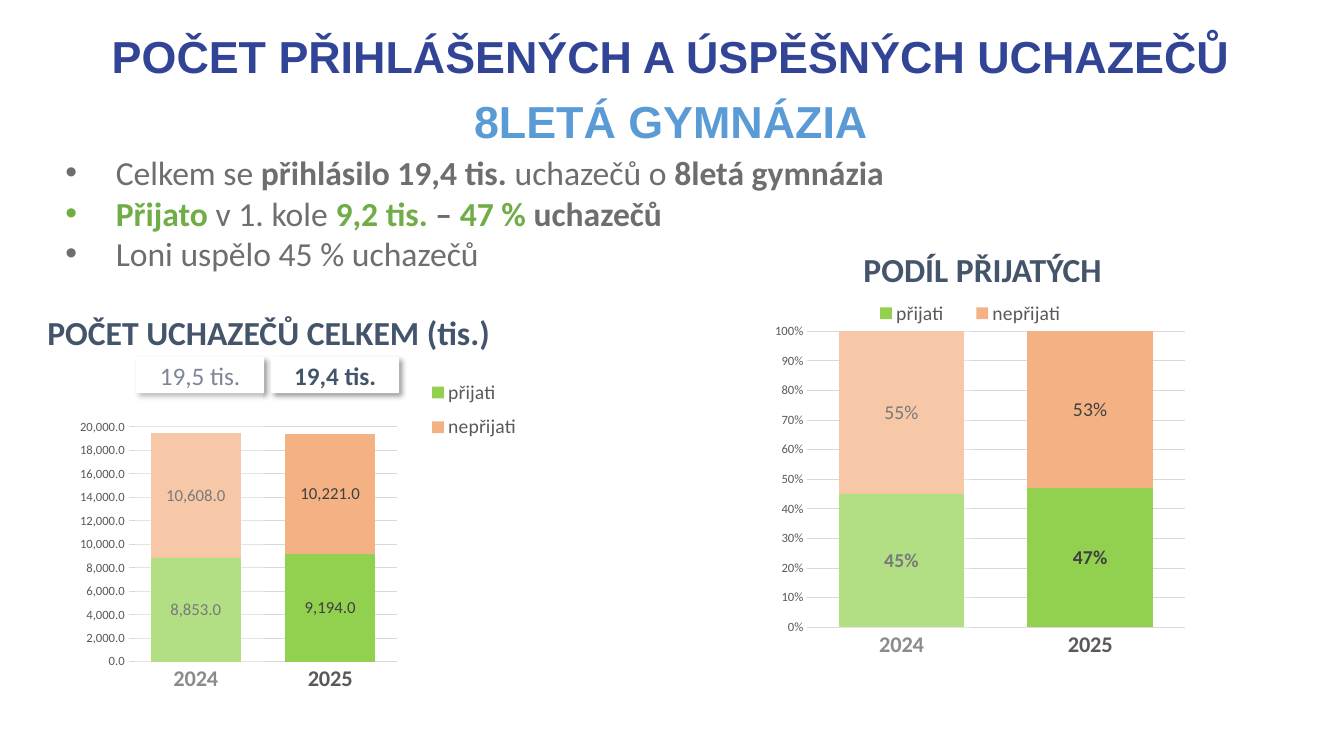
from dataclasses import dataclass
from typing import Any

from lxml.etree import SubElement
from pptx import Presentation
from pptx.chart.data import CategoryChartData as Data
from pptx.dml.color import RGBColor as Rgb
from pptx.enum.chart import XL_CHART_TYPE as Kind
from pptx.enum.chart import XL_LEGEND_POSITION as Side
from pptx.enum.chart import XL_TICK_MARK as Tick
from pptx.enum.shapes import MSO_SHAPE as Form
from pptx.enum.text import MSO_ANCHOR as Anchor
from pptx.enum.text import MSO_AUTO_SIZE as Auto
from pptx.enum.text import PP_ALIGN as Align
from pptx.oxml import parse_xml
from pptx.oxml.ns import nsdecls, qn
from pptx.util import Inches, Pt

HUES = {
    "navy": "324496", "sky": "5B9BD5", "gray": "6D6E70", "leaf": "70AD47",
    "slate": "44546A", "white": "FFFFFF", "black": "000000", "lime": "92D050",
    "peach": "F4B183", "axis": "595959", "label": "404040", "grid": "D9D9D9",
}
YEARS = ("2024", "2025")
Box = tuple[float, float, float, float]


@dataclass
class Run:
    text: str
    hue: str = "gray"
    bold: bool = False


@dataclass
class Head:
    text: str
    box: Box


@dataclass
class Tag:
    text: str
    left: float
    bold: bool


@dataclass
class Graph:
    kind: Any
    box: Box
    plot: Box
    key: Box
    form: str
    size: int
    bold: bool
    rows: dict[str, tuple[float, float]]
    top: float | None = None


def color(hue: str) -> Rgb:
    return Rgb.from_string(HUES[hue])


def style(font: Any, hue: str, size: int, bold: bool = False, name: str = "Calibri") -> None:
    form = {"name": name, "size": Pt(size), "bold": bold}
    for key, val in form.items():
        setattr(font, key, val)
    font.color.rgb = color(hue)


def place(item: Any, box: Box) -> None:
    for key, val in zip(("left", "top", "width", "height"), box):
        setattr(item, key, Inches(val))


def add_text(slide: Any, box: Box) -> Any:
    frame = slide.shapes.add_textbox(*map(Inches, box)).text_frame
    frame.word_wrap = True
    return frame


def write(para: Any, runs: list[Run], size: int, name: str = "Calibri") -> None:
    for item in runs:
        run = para.add_run()
        run.text = item.text
        style(run.font, item.hue, size, item.bold, name)


def bullet(para: Any) -> None:
    props = para._p.get_or_add_pPr()
    props.set("marL", str(Inches(0.5)))
    props.set("indent", str(-Inches(0.5)))
    SubElement(props, qn("a:buFont")).set("typeface", "Arial")
    SubElement(props, qn("a:buChar")).set("char", "•")


def add_block(slide: Any, box: Box) -> Any:
    block = slide.shapes.add_shape(Form.RECTANGLE, *map(Inches, box))
    block.shadow.inherit = False
    block.fill.solid()
    block.fill.fore_color.rgb = color("white")
    block.line.fill.background()
    return block


def add_tag(slide: Any, tag: Tag) -> None:
    block = add_block(slide, (tag.left, 3.54, 1.27, 0.36))
    glow = block._element.spPr.find(qn("a:effectLst"))
    glow.append(parse_xml(
        f'<a:outerShdw {nsdecls("a")} blurRad="{Pt(4)}" dist="{Pt(3)}" dir="2700000" '
        f'algn="tl" rotWithShape="0"><a:srgbClr val="{HUES["black"]}">'
        '<a:alpha val="40000"/></a:srgbClr></a:outerShdw>'))
    frame = block.text_frame
    frame.vertical_anchor = Anchor.MIDDLE
    frame.paragraphs[0].alignment = Align.CENTER
    write(frame.paragraphs[0], [Run(tag.text, "slate", tag.bold)], 18)


def add_veil(slide: Any, box: Box) -> None:
    block = add_block(slide, box)
    shade = block._element.spPr.find(f'{qn("a:solidFill")}/{qn("a:srgbClr")}')
    SubElement(shade, qn("a:alpha")).set("val", "30000")


def lay_out(part: Any, box: Box, inner: bool = False) -> None:
    for old in part.findall(qn("c:layout")):
        part.remove(old)
    zone = '<c:layoutTarget val="inner"/>' if inner else ""
    modes = "".join(f'<c:{key}Mode val="edge"/>' for key in "xy")
    sizes = "".join(f'<c:{key} val="{val}"/>' for key, val in zip("xywh", box))
    layout = parse_xml(f'<c:layout {nsdecls("c")}><c:manualLayout>{zone}{modes}{sizes}'
                       '</c:manualLayout></c:layout>')
    part.insert(0 if inner else 1, layout)


def add_graph(slide: Any, spec_: Graph) -> None:
    data = Data(number_format=spec_.form)
    data.categories = YEARS
    for name, vals in spec_.rows.items():
        data.add_series(name, vals)
    chart = slide.shapes.add_chart(spec_.kind, *map(Inches, spec_.box), data).chart
    style(chart.font, "black", 10)
    chart.has_title = False

    # Legend and plot area
    chart.has_legend = True
    chart.legend.position = Side.BOTTOM
    chart.legend.include_in_layout = False
    style(chart.legend.font, "axis", 14)
    lay_out(chart.legend._element, spec_.key)
    lay_out(chart._chartSpace.chart.plotArea, spec_.plot, True)

    # Axes
    years, scale = chart.category_axis, chart.value_axis
    for axis, size, bold in ((years, 16, True), (scale, 9, False)):
        axis.major_tick_mark = axis.minor_tick_mark = Tick.NONE
        style(axis.tick_labels.font, "axis", size, bold)
    scale.has_major_gridlines = True
    for line in (years.format.line, scale.major_gridlines.format.line):
        line.color.rgb = color("grid")
        line.width = Pt(0.75)
    scale.format.line.fill.background()
    scale.tick_labels.number_format = spec_.form
    scale.tick_labels.number_format_is_linked = False
    if spec_.top:
        scale.maximum_scale = spec_.top

    # Columns and labels
    plot = chart.plots[0]
    form = {"gap_width": 50, "overlap": 100, "vary_by_categories": False}
    for key, val in form.items():
        setattr(plot, key, val)
    for row, hue, bold in zip(plot.series, ("lime", "peach"), (spec_.bold, False)):
        row.format.fill.solid()
        row.format.fill.fore_color.rgb = color(hue)
        labels = row.data_labels
        form = {"show_value": True, "number_format": spec_.form,
                "number_format_is_linked": False}
        for key, val in form.items():
            setattr(labels, key, val)
        style(labels.font, "label", spec_.size, bold)


GRAPHS = [
    Graph(Kind.COLUMN_STACKED_100, (7.36, 2.89, 4.62, 3.97), (0.14, 0.1, 0.81, 0.74),
          (0.24, 0.01, 0.5, 0.09), "0%", 14, True,
          {"přijati": (0.45, 0.47), "nepřijati": (0.55, 0.53)}),
    Graph(Kind.COLUMN_STACKED, (0.61, 3.22, 4.76, 3.76), (0.14, 0.27, 0.56, 0.62),
          (0.75, 0.12, 0.22, 0.21), "#,##0.0", 12, False,
          {"přijati": (8853, 9194), "nepřijati": (10608, 10221)}, 20000),
]
POINTS = [
    [Run("Celkem se "), Run("přihlásilo 19,4 tis. ", bold=True),
     Run("uchazečů o "), Run("8letá gymnázia", bold=True)],
    [Run("Přijato ", "leaf", True), Run("v 1. kole "), Run("9,2 tis. ", "leaf", True),
     Run("– ", bold=True), Run("47 %", "leaf", True), Run(" uchazečů", bold=True)],
    [Run("Loni uspělo 45 % uchazečů")],
]
HEADS = [Head("POČET UCHAZEČŮ CELKEM (tis.)", (0.25, 3.02, 4.83, 0.55)),
         Head("PODÍL PŘIJATÝCH", (7.32, 2.39, 4.85, 0.55))]
TAGS = [Tag("19,5 tis.", 1.35, False), Tag("19,4 tis.", 2.69, True)]
VEILS = [(8.32, 3.26, 1.3, 3.6), (1.34, 3.47, 1.27, 3.57)]


def main() -> None:
    deck = Presentation()
    deck.slide_width, deck.slide_height = Inches(13.33), Inches(7.5)
    slide = deck.slides.add_slide(deck.slide_layouts[5])

    # Title
    title = slide.shapes.title
    place(title, (0.55, 0.21, 12.21, 1.27))
    frame = title.text_frame
    frame.auto_size, frame.vertical_anchor = Auto.NONE, Anchor.TOP
    lines = [Run("POČET PŘIHLÁŠENÝCH A ÚSPĚŠNÝCH UCHAZEČŮ", "navy", True),
             Run("8LETÁ GYMNÁZIA", "sky", True)]
    for spot, line in enumerate(lines):
        para = frame.add_paragraph() if spot else frame.paragraphs[0]
        form = {"alignment": Align.CENTER, "line_spacing": 1.05,
                "space_before": Pt(0), "space_after": Pt(6)}
        for key, val in form.items():
            setattr(para, key, val)
        write(para, [line], 32, "Arial")

    # Charts
    for graph in GRAPHS:
        add_graph(slide, graph)

    # Key points
    frame = add_text(slide, (0.55, 1.46, 12.34, 1.31))
    for spot, runs in enumerate(POINTS):
        para = frame.add_paragraph() if spot else frame.paragraphs[0]
        bullet(para)
        style(para.font, "gray", 24)
        write(para, runs, 24)

    # Chart headings, totals and veils over the earlier year
    for head in HEADS:
        frame = add_text(slide, head.box)
        frame.vertical_anchor = Anchor.MIDDLE
        frame.paragraphs[0].alignment = Align.CENTER
        write(frame.paragraphs[0], [Run(head.text, "slate", True)], 24)
    for tag in TAGS:
        add_tag(slide, tag)
    for veil in VEILS:
        add_veil(slide, veil)

    deck.save("out.pptx")


if __name__ == "__main__":
    main()
